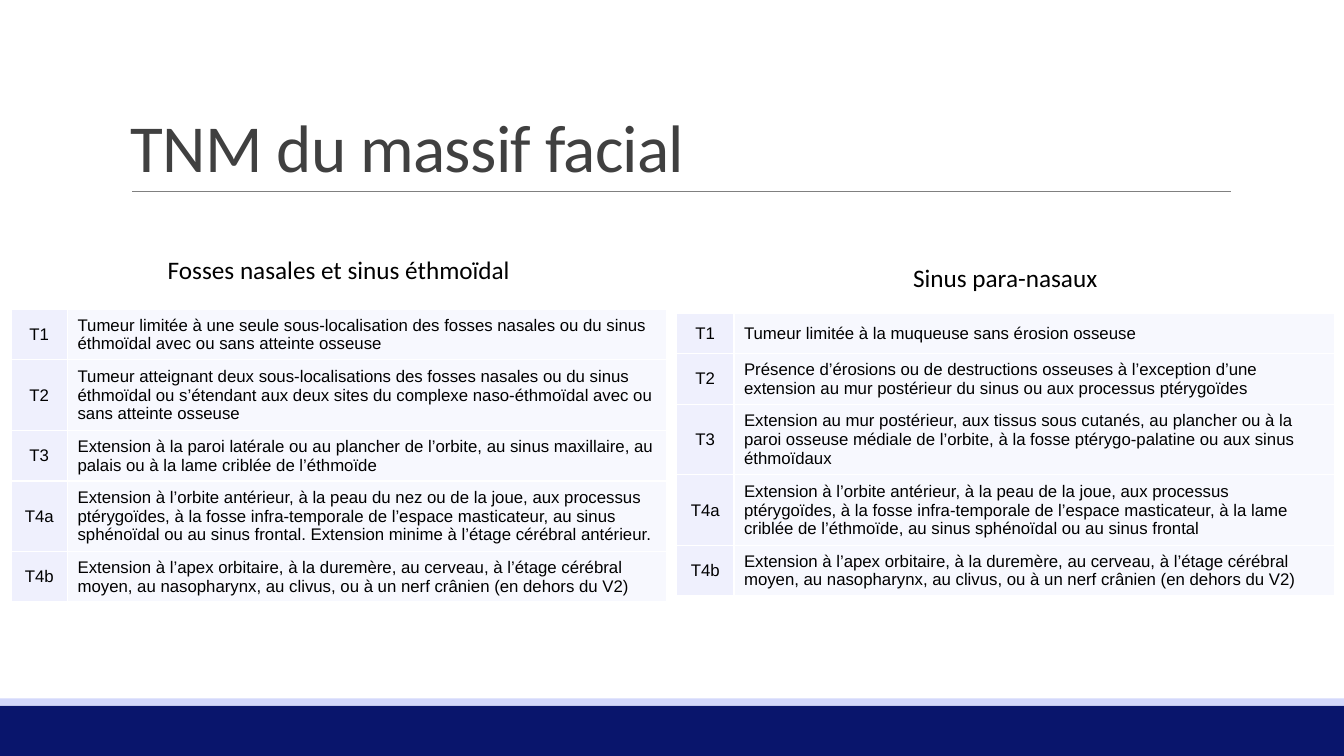
from lxml import etree
from pptx import Presentation
from pptx.dml.color import RGBColor
from pptx.enum import shapes, text
from pptx.oxml.ns import qn
from pptx.util import Inches, Pt

NAVY = RGBColor(0x09, 0x15, 0x6C)
LAVENDER = RGBColor(0xD3, 0xD8, 0xFB)
STAGE_FILL = RGBColor(0xEF, 0xF0, 0xFD)
DETAIL_FILL = RGBColor(0xF7, 0xF8, 0xFE)
GREY = RGBColor(0x80, 0x80, 0x80)
TITLE_GREY = RGBColor(0x40, 0x40, 0x40)
BLACK = RGBColor(0, 0, 0)

STAGES = ["T1", "T2", "T3", "T4a", "T4b"]
T4B = ("Extension à l’apex orbitaire, à la duremère, au cerveau, à l’étage cérébral moyen, "
       "au nasopharynx, au clivus, ou à un nerf crânien (en dehors du V2)")
SINUS = [
    "Tumeur limitée à la muqueuse sans érosion osseuse",
    "Présence d’érosions ou de destructions osseuses à l’exception d’une extension au mur "
    "postérieur du sinus ou aux processus ptérygoïdes",
    "Extension au mur postérieur, aux tissus sous cutanés, au plancher ou à la paroi osseuse "
    "médiale de l’orbite, à la fosse ptérygo-palatine ou aux sinus éthmoïdaux",
    "Extension à l’orbite antérieur, à la peau de la joue, aux processus ptérygoïdes, à la fosse "
    "infra-temporale de l’espace masticateur, à la lame criblée de l’éthmoïde, au sinus "
    "sphénoïdal ou au sinus frontal",
    T4B,
]
FOSSES = [
    "Tumeur limitée à une seule sous-localisation des fosses nasales ou du sinus éthmoïdal avec "
    "ou sans atteinte osseuse",
    "Tumeur atteignant deux sous-localisations des fosses nasales ou du sinus éthmoïdal ou "
    "s’étendant aux deux sites du complexe naso-éthmoïdal avec ou sans atteinte osseuse",
    "Extension à la paroi latérale ou au plancher de l’orbite, au sinus maxillaire, au palais ou "
    "à la lame criblée de l’éthmoïde",
    "Extension à l’orbite antérieur, à la peau du nez ou de la joue, aux processus ptérygoïdes, "
    "à la fosse infra-temporale de l’espace masticateur, au sinus sphénoïdal ou au sinus frontal. "
    "Extension minime à l’étage cérébral antérieur.",
    T4B,
]


def write(frame, words, size=12, font="Arial", color=BLACK, align=text.PP_ALIGN.LEFT):
    frame.word_wrap = True
    para = frame.paragraphs[0]
    para.alignment = align
    span = para.add_run()
    span.text = words
    span.font.size = Pt(size)
    span.font.name = font
    span.font.color.rgb = color
    return para


def add_borders(cell):
    properties = cell._tc.get_or_add_tcPr()
    for side in ("lnL", "lnR", "lnT", "lnB"):
        line = etree.SubElement(properties, qn(f"a:{side}"), w=str(Pt(1)))
        fill = etree.SubElement(line, qn("a:solidFill"))
        etree.SubElement(fill, qn("a:srgbClr"), val="FFFFFF")


deck = Presentation()
deck.slide_width = Inches(13.33)
deck.slide_height = Inches(7.5)
page = deck.slides.add_slide(deck.slide_layouts[6])

for top, height, color in [(7, 0.5, NAVY), (6.93, 0.07, LAVENDER)]:
    band = page.shapes.add_shape(shapes.MSO_SHAPE.RECTANGLE, 0, Inches(top),
                                 deck.slide_width, Inches(height))
    band.shadow.inherit = False
    band.fill.solid()
    band.fill.fore_color.rgb = color
    band.line.fill.background()

rule = page.shapes.add_connector(shapes.MSO_CONNECTOR.STRAIGHT, Inches(1.31), Inches(1.9),
                                 Inches(12.21), Inches(1.9))
rule.line.color.rgb = GREY
rule.line.width = Pt(0.5)
etree.SubElement(rule._element.spPr, qn("a:effectLst"))

title = page.shapes.add_textbox(Inches(1.2), Inches(0.31), Inches(11), Inches(1.59))
title.text_frame.vertical_anchor = text.MSO_ANCHOR.BOTTOM
para = write(title.text_frame, "TNM du massif facial", size=48, font="Calibri", color=TITLE_GREY)
para.line_spacing = 0.85
para.runs[0]._r.get_or_add_rPr().set("spc", "-50")

tables = [
    (6.71, 3.11, [0.57, 5.96], [0.4, 0.49, 0.66, 0.69, 0.49], SINUS),
    (0.11, 3.07, [0.56, 5.94], [0.47, 0.69, 0.47, 0.66, 0.47], FOSSES),
]
for left, top, widths, heights, details in tables:
    grid = page.shapes.add_table(len(heights), len(widths), Inches(left), Inches(top),
                                 Inches(sum(widths)), Inches(sum(heights))).table
    grid.first_row = False
    grid.horz_banding = False
    for column, width in zip(grid.columns, widths):
        column.width = Inches(width)
    for row, height, stage, detail in zip(grid.rows, heights, STAGES, details):
        row.height = Inches(height)
        for cell, words, fill, align in zip(row.cells, (stage, detail),
                                            (STAGE_FILL, DETAIL_FILL),
                                            (text.PP_ALIGN.CENTER, text.PP_ALIGN.LEFT)):
            add_borders(cell)
            cell.fill.solid()
            cell.fill.fore_color.rgb = fill
            cell.vertical_anchor = text.MSO_ANCHOR.MIDDLE
            write(cell.text_frame, words, align=align)

for left, top, words in [(7.96, 2.55, "Sinus para-nasaux"),
                         (1.35, 2.47, "Fosses nasales et sinus éthmoïdal")]:
    box = page.shapes.add_textbox(Inches(left), Inches(top), Inches(4.02), Inches(0.4))
    box.text_frame.auto_size = text.MSO_AUTO_SIZE.SHAPE_TO_FIT_TEXT
    write(box.text_frame, words, size=18, font="Calibri", align=text.PP_ALIGN.CENTER)

deck.save("out.pptx")
